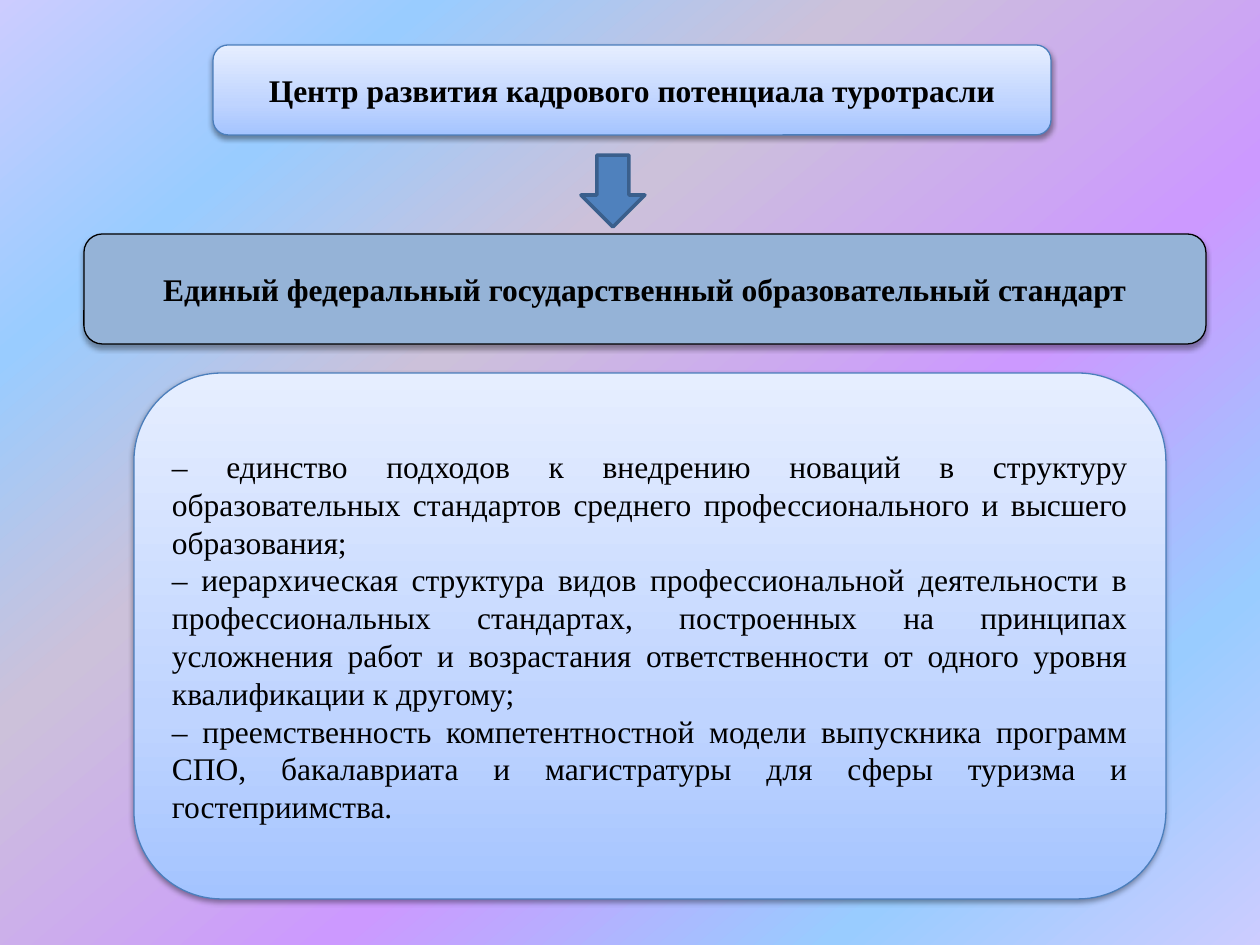
import pptx
import pptx.dml.color
import pptx.enum.shapes
import pptx.enum.text
import pptx.oxml
import pptx.oxml.ns
import pptx.util

PX_PER_INCH = 126
FONT = "Times New Roman"
SHAPES = pptx.enum.shapes.MSO_SHAPE
ALIGN = pptx.enum.text.PP_ALIGN
qn = pptx.oxml.ns.qn

BACKGROUND = [(0, "CCCCFF"), (18, "99CCFF"), (36, "CCC1DA"),
              (61, "CC99FF"), (82, "99CCFF"), (100, "CCCCFF")]
PALE_BLUE = [(0, "A4C4FF"), (35, "BFD4FF"), (100, "E6EEFF")]

CENTRE = "Центр развития кадрового потенциала туротрасли"
STANDARD = "Единый федеральный государственный образовательный стандарт"
PRINCIPLES = [
    "– единство подходов к внедрению новаций в структуру образовательных "
    "стандартов среднего профессионального и высшего образования;",
    "– иерархическая структура видов профессиональной деятельности в "
    "профессиональных стандартах, построенных на принципах усложнения работ и "
    "возрастания ответственности от одного уровня квалификации к другому;",
    "– преемственность компетентностной модели выпускника программ СПО, "
    "бакалавриата и магистратуры для сферы туризма и гостеприимства.",
]


def px(length):
    return pptx.util.Emu(round(length * 914400 / PX_PER_INCH))


def colour(hex_value):
    return pptx.dml.color.RGBColor.from_string(hex_value)


def set_gradient(fill, owner, stops, clockwise_angle):
    """Linear gradient with any number of (percent, colour) stops."""
    fill.gradient()
    fill.gradient_angle = 360 - clockwise_angle
    stop_list = owner.find(".//" + qn("a:gsLst"))
    for old_stop in list(stop_list):
        stop_list.remove(old_stop)
    for percent, hex_value in stops:
        stop_list.append(pptx.oxml.parse_xml(
            f'<a:gs {pptx.oxml.ns.nsdecls("a")} pos="{percent * 1000}">'
            f'<a:srgbClr val="{hex_value}"/></a:gs>'))


def add_shadow(shape, opacity, distance):
    """Soft black shadow falling straight down; distance in points."""
    effects = shape._element.spPr.find(qn("a:effectLst"))
    effects.append(pptx.oxml.parse_xml(
        f'<a:outerShdw {pptx.oxml.ns.nsdecls("a")} '
        f'blurRad="{pptx.util.Pt(3.1)}" dist="{pptx.util.Pt(distance)}" '
        f'dir="5400000" rotWithShape="0"><a:srgbClr val="000000">'
        f'<a:alpha val="{opacity * 1000}"/></a:srgbClr></a:outerShdw>'))


def add_block(slide, kind, box, fill, line, line_width):
    """Preset shape; fill is a colour or a list of gradient stops."""
    block = slide.shapes.add_shape(kind, *map(px, box))
    block.shadow.inherit = False
    if isinstance(fill, str):
        block.fill.solid()
        block.fill.fore_color.rgb = colour(fill)
    else:
        set_gradient(block.fill, block._element, fill, 270)
    block.line.color.rgb = colour(line)
    block.line.width = pptx.util.Pt(line_width)
    return block


def write_text(block, lines, align, bold):
    frame = block.text_frame
    frame.word_wrap = True
    frame.vertical_anchor = pptx.enum.text.MSO_ANCHOR.MIDDLE
    font_format = {"name": FONT, "size": pptx.util.Pt(18), "bold": bold}
    for index, line in enumerate(lines):
        paragraph = frame.add_paragraph() if index else frame.paragraphs[0]
        paragraph.alignment = align
        run = paragraph.add_run()
        run.text = line
        for attribute, value in font_format.items():
            setattr(run.font, attribute, value)
        run.font.color.rgb = colour("000000")


def add_panel(slide, box, lines, fill=PALE_BLUE, line="4B7EBC",
              shadow=(38, 1.6), align=ALIGN.CENTER, bold=True):
    panel = add_block(slide, SHAPES.ROUNDED_RECTANGLE, box, fill, line, 0.75)
    add_shadow(panel, *shadow)
    write_text(panel, lines, align, bold)


def main():
    deck = pptx.Presentation()
    deck.slide_width, deck.slide_height = px(1260), px(945)
    slide = deck.slides.add_slide(deck.slide_layouts[6])
    set_gradient(slide.background.fill, slide._element, BACKGROUND, 50)

    # Principles of the standard
    add_panel(slide, (134, 373, 1032, 526), PRINCIPLES,
              align=ALIGN.JUSTIFY, bold=False)

    # Standard, and the centre that leads to it
    add_panel(slide, (84, 234, 1122, 110), [STANDARD],
              fill="95B3D7", line="000000", shadow=(35, 1.8))
    add_panel(slide, (213, 45, 838, 90), [CENTRE])
    add_block(slide, SHAPES.DOWN_ARROW, (581, 155, 64, 72),
              "4F81BD", "3A5F8C", 2)

    deck.save("out.pptx")


if __name__ == "__main__":
    main()
